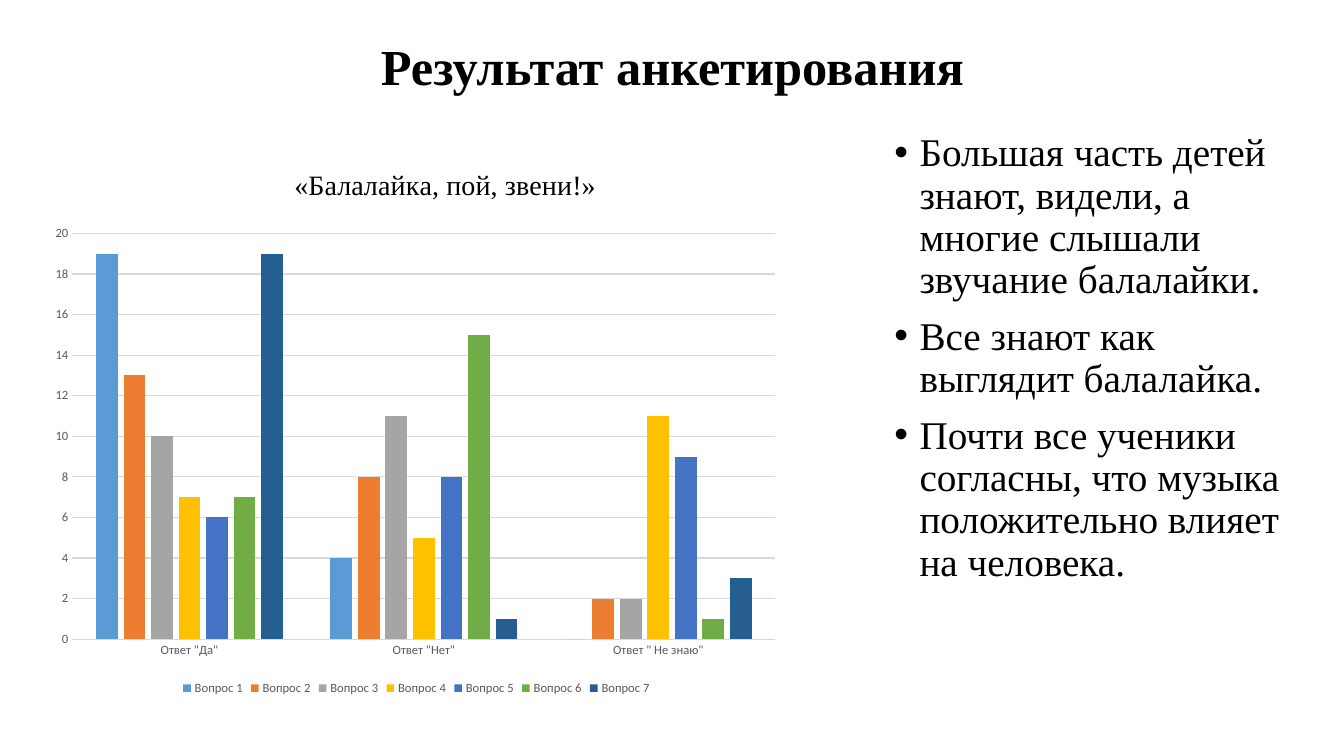
from dataclasses import dataclass

from lxml.etree import SubElement
from pptx import Presentation
from pptx.chart.data import CategoryChartData
from pptx.dml.color import RGBColor
from pptx.enum.chart import XL_CHART_TYPE, XL_LEGEND_POSITION, XL_TICK_MARK
from pptx.enum.text import MSO_ANCHOR, MSO_AUTO_SIZE, PP_ALIGN
from pptx.oxml import parse_xml
from pptx.oxml.ns import nsdecls, qn
from pptx.util import Pt

PX = 9144  # 100 px to the inch


@dataclass(frozen=True)
class Theme:
    serif: str = "Times New Roman"
    sans: str = "Calibri"
    ink: str = "000000"
    label: str = "595959"
    grid: str = "D9D9D9"
    series: tuple = ("5B9BD5", "ED7D31", "A5A5A5", "FFC000",
                     "4472C4", "70AD47", "255E91")
    title_size: int = 36
    body_size: int = 28
    chart_title_size: int = 20
    label_size: int = 9


THEME = Theme()

TITLE = "Результат анкетирования"
FINDINGS = (
    "Большая часть детей знают, видели, а многие слышали звучание балалайки.",
    "Все знают как выглядит балалайка.",
    "Почти все ученики согласны, что музыка положительно влияет на человека.",
)
CHART_TITLE = "«Балалайка, пой, звени!»"
ANSWERS = ('Ответ "Да"', 'Ответ "Нет"', 'Ответ " Не знаю"')
VOTES = ((19, 4, 0), (13, 8, 2), (10, 11, 2), (7, 5, 11),
         (6, 8, 9), (7, 15, 1), (19, 1, 3))


def emu(box):
    return [v * PX for v in box]


def apply(obj, values):
    for name, value in values.items():
        setattr(obj, name, value)


def style_font(font, name, size, color, bold=False):
    apply(font, {"name": name, "size": Pt(size), "bold": bold})
    font.color.rgb = RGBColor.from_string(color)


def place(sp, box):
    apply(sp, dict(zip(("left", "top", "width", "height"), emu(box))))


def add_title(s, box):
    sp = s.shapes.title
    place(sp, box)
    tf = sp.text_frame
    apply(tf, {"text": TITLE, "word_wrap": True, "margin_top": 2 * PX,
               "vertical_anchor": MSO_ANCHOR.TOP,
               "auto_size": MSO_AUTO_SIZE.NONE})
    p = tf.paragraphs[0]
    apply(p, {"alignment": PP_ALIGN.CENTER, "line_spacing": 0.9})
    style_font(p.runs[0].font, THEME.serif, THEME.title_size, THEME.ink, True)


def add_findings(s, box):
    sp = s.placeholders[1]
    place(sp, box)
    tf = sp.text_frame
    apply(tf, {"text": "\n".join(FINDINGS), "word_wrap": True,
               "vertical_anchor": MSO_ANCHOR.TOP,
               "auto_size": MSO_AUTO_SIZE.NONE})
    for p in tf.paragraphs:
        apply(p, {"alignment": PP_ALIGN.LEFT, "line_spacing": 0.9,
                  "space_before": Pt(10)})
        style_font(p.runs[0].font, THEME.serif, THEME.body_size, THEME.ink)
        pPr = p._p.get_or_add_pPr()
        pPr.set("marL", str(25 * PX))
        pPr.set("indent", str(-25 * PX))
        SubElement(pPr, qn("a:buFont"), typeface="Arial")
        SubElement(pPr, qn("a:buChar"), char="•")


def set_layout(parent, index, inner=False, **fractions):
    """Fix a chart part at fractions of the chart area."""
    old = parent.find(qn("c:layout"))
    if old is not None:
        parent.remove(old)
    target = '<c:layoutTarget val="inner"/>' if inner else ""
    modes = "".join(f'<c:{k}Mode val="edge"/>' for k in "xy")
    values = "".join(f'<c:{k} val="{v}"/>' for k, v in fractions.items())
    parent.insert(index, parse_xml(
        f'<c:layout {nsdecls("c")}><c:manualLayout>{target}{modes}{values}'
        '</c:manualLayout></c:layout>'))


def add_survey_chart(s, box):
    data = CategoryChartData()
    data.categories = ANSWERS
    for n, votes in enumerate(VOTES, 1):
        data.add_series(f"Вопрос {n}", votes)
    chart = s.shapes.add_chart(XL_CHART_TYPE.COLUMN_CLUSTERED,
                               *emu(box), data).chart
    style_font(chart.font, THEME.sans, 10, THEME.ink)

    tf = chart.chart_title.text_frame
    tf.text = CHART_TITLE
    style_font(tf.paragraphs[0].runs[0].font, THEME.serif,
               THEME.chart_title_size, THEME.ink)
    chart.chart_title.include_in_layout = False
    set_layout(chart.chart_title._element, 1, x=0.33, y=0.02)

    plot = chart.plots[0]
    apply(plot, {"gap_width": 219, "overlap": -27, "vary_by_categories": False})
    for series, color in zip(plot.series, THEME.series):
        series.format.fill.solid()
        series.format.fill.fore_color.rgb = RGBColor.from_string(color)
    set_layout(chart._chartSpace.chart.plotArea, 0, inner=True,
               x=0.04, y=0.15, w=0.94, h=0.74)

    cat, val = chart.category_axis, chart.value_axis
    for axis in (cat, val):
        apply(axis, {"major_tick_mark": XL_TICK_MARK.NONE,
                     "minor_tick_mark": XL_TICK_MARK.NONE})
        style_font(axis.tick_labels.font, THEME.sans, THEME.label_size,
                   THEME.label)
    apply(val, {"minimum_scale": 0, "maximum_scale": 20, "major_unit": 2})
    val.format.line.fill.background()
    for line in (cat.format.line, val.major_gridlines.format.line):
        line.width = Pt(0.75)
        line.color.rgb = RGBColor.from_string(THEME.grid)

    chart.has_legend = True
    apply(chart.legend, {"position": XL_LEGEND_POSITION.BOTTOM,
                         "include_in_layout": False})
    style_font(chart.legend.font, THEME.sans, THEME.label_size, THEME.label)


def main():
    prs = Presentation()
    apply(prs, {"slide_width": 1333 * PX, "slide_height": 750 * PX})
    s = prs.slides.add_slide(prs.slide_layouts[1])
    add_title(s, (92, 40, 1150, 87))
    add_findings(s, (877, 127, 402, 583))
    add_survey_chart(s, (42, 150, 742, 544))
    prs.save("out.pptx")


if __name__ == "__main__":
    main()
